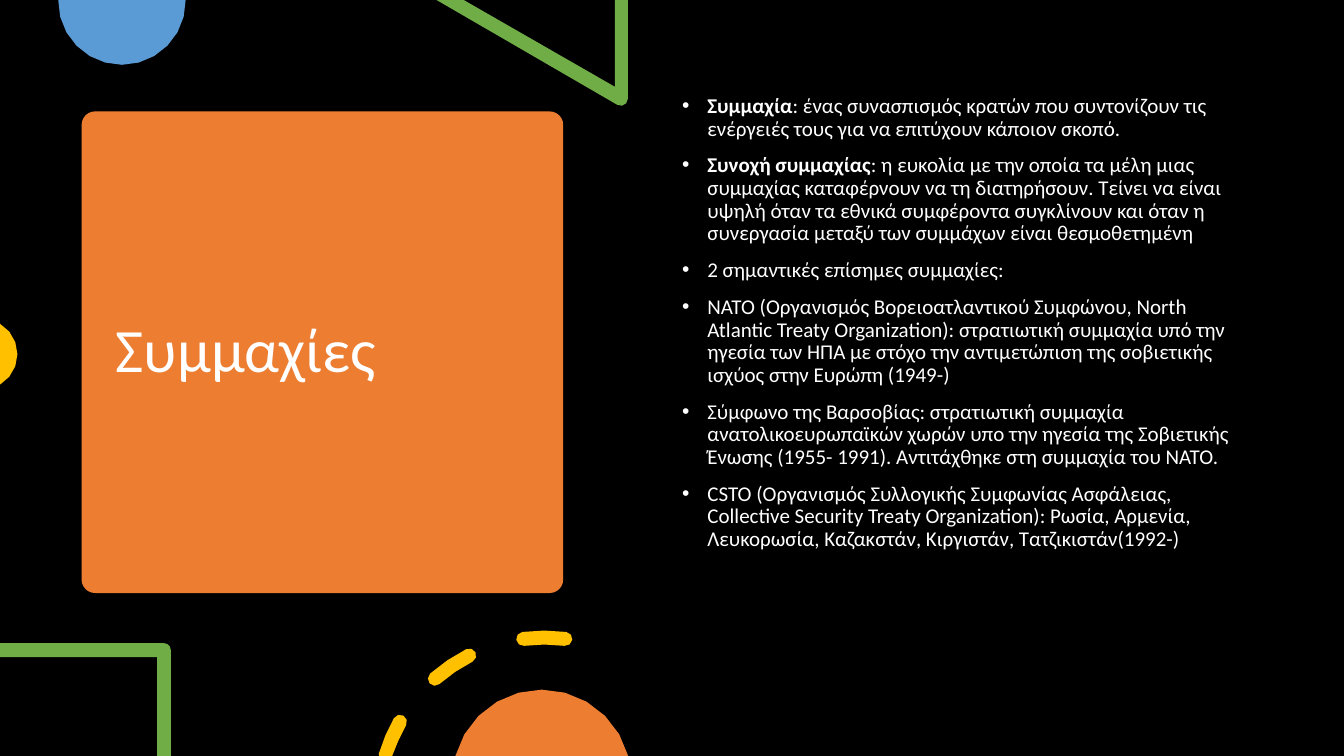
"""Build the slide about alliances."""
from dataclasses import dataclass
from math import cos, radians, sin

from lxml.etree import SubElement
from pptx import Presentation
from pptx.dml.color import RGBColor
from pptx.enum.shapes import MSO_SHAPE
from pptx.enum.text import MSO_ANCHOR
from pptx.oxml.ns import qn
from pptx.shapes.base import BaseShape
from pptx.slide import Slide
from pptx.text.text import TextFrame, _Paragraph
from pptx.util import Pt

BLACK = RGBColor(0x00, 0x00, 0x00)
WHITE = RGBColor(0xFF, 0xFF, 0xFF)
ORANGE = RGBColor(0xED, 0x7D, 0x31)
BLUE = RGBColor(0x5B, 0x9B, 0xD5)
GREEN = RGBColor(0x70, 0xAD, 0x47)
YELLOW = RGBColor(0xFF, 0xC0, 0x00)

SLIDE_WIDTH, SLIDE_HEIGHT = 960, 540
BULLET_INDENT = 18
RING_X, RING_Y, RING_RADIUS, DASH_RADIUS = 388.8, 573.8, 118.4, 5
DASH_ANGLES = [(196.6, 209.5), (228.7, 243.1), (262.7, 277.3)]

Contour = list[tuple[float, float]]


@dataclass
class Ornament:
    """A filled outline made of one or more contours."""
    color: RGBColor
    contours: list[Contour]


@dataclass
class Bullet:
    """A bulleted paragraph with an optional bold term."""
    term: str
    text: str


BULLETS = [
    Bullet("Συμμαχία", ": ένας συνασπισμός κρατών που συντονίζουν τις ενέργειές "
           "τους για να επιτύχουν κάποιον σκοπό."),
    Bullet("Συνοχή συμμαχίας", ": η ευκολία με την οποία τα μέλη μιας συμμαχίας "
           "καταφέρνουν να τη διατηρήσουν. Τείνει να είναι υψηλή όταν τα εθνικά "
           "συμφέροντα συγκλίνουν και όταν η συνεργασία μεταξύ των συμμάχων είναι "
           "θεσμοθετημένη"),
    Bullet("", "2 σημαντικές επίσημες συμμαχίες:"),
    Bullet("", "ΝΑΤΟ (Οργανισμός Βορειοατλαντικού Συμφώνου, North Atlantic Treaty "
           "Organization): στρατιωτική συμμαχία υπό την ηγεσία των ΗΠΑ με στόχο την "
           "αντιμετώπιση της σοβιετικής ισχύος στην Ευρώπη (1949-)"),
    Bullet("", "Σύμφωνο της Βαρσοβίας: στρατιωτική συμμαχία ανατολικοευρωπαϊκών "
           "χωρών υπο την ηγεσία της Σοβιετικής Ένωσης (1955- 1991). Αντιτάχθηκε "
           "στη συμμαχία του ΝΑΤΟ."),
    Bullet("", "CSTO (Οργανισμός Συλλογικής Συμφωνίας Ασφάλειας, Collective Security "
           "Treaty Organization): Ρωσία, Αρμενία, Λευκορωσία, Καζακστάν, Κιργιστάν, "
           "Τατζικιστάν(1992-)"),
]


def arc(x: float, y: float, radius: float, start: float, end: float,
        steps: int) -> Contour:
    """Return points along a circular arc, with angles in clockwise degrees."""
    angles = [radians(start + (end - start) * step / steps) for step in range(steps + 1)]
    return [(x + radius * cos(angle), y + radius * sin(angle)) for angle in angles]


def dash(start: float, end: float) -> Contour:
    """Return a round-ended piece of the ring, cut at the slide's bottom edge."""
    [start_center, end_center] = arc(RING_X, RING_Y, RING_RADIUS, start, end, 1)
    points = (arc(RING_X, RING_Y, RING_RADIUS + DASH_RADIUS, start, end, 2)
              + arc(*end_center, DASH_RADIUS, end, end + 180, 4)[1:-1]
              + arc(RING_X, RING_Y, RING_RADIUS - DASH_RADIUS, end, start, 2)
              + arc(*start_center, DASH_RADIUS, start + 180, start + 360, 4)[1:-1])
    return [(x, min(y, SLIDE_HEIGHT)) for x, y in points]


ORNAMENTS = [
    Ornament(BLUE, [arc(87.12, 0.8, 45.5, -1, 181, 12)]),
    Ornament(GREEN, [[(448.5, 0), (439.2, 0), (439.2, 62), (331.2, 0), (311.8, 0)]
                     + arc(443.5, 70.6, 5, 120, 0, 3)]),
    Ornament(YELLOW, [arc(-12.7, 253, 25.2, -59.7, 59.7, 6)]),
    Ornament(GREEN, [[(0, 459.4), (0, 469.4), (112.3, 469.4), (112.3, 540), (122, 540)]
                     + arc(117.2, 464.2, 4.8, 0, -90, 3)]),
    Ornament(YELLOW, [dash(start, end) for start, end in DASH_ANGLES]),
    Ornament(ORANGE, [arc(387, 556.5, 63.9, 195, 345, 10)]),
]


def paint(shape: BaseShape, color: RGBColor) -> None:
    """Give a shape a flat fill without line or shadow."""
    shape.shadow.inherit = False
    shape.fill.solid()
    shape.fill.fore_color.rgb = color
    shape.line.fill.background()


def draw_ornament(slide: Slide, ornament: Ornament) -> None:
    """Draw an ornament as a single freeform."""
    first, *others = [[(Pt(x), Pt(y)) for x, y in contour] for contour in ornament.contours]
    builder = slide.shapes.build_freeform(*first[0])
    builder.add_line_segments(first[1:])
    for contour in others:
        builder.move_to(*contour[0])
        builder.add_line_segments(contour[1:])
    paint(builder.convert_to_shape(), ornament.color)


def add_text_frame(slide: Slide, left: float, top: float, width: float,
                   height: float, anchor: MSO_ANCHOR) -> TextFrame:
    """Add a wrapping text box and return its frame."""
    frame = slide.shapes.add_textbox(Pt(left), Pt(top), Pt(width), Pt(height)).text_frame
    for name, value in {"word_wrap": True, "vertical_anchor": anchor}.items():
        setattr(frame, name, value)
    return frame


def add_run(paragraph: _Paragraph, text: str, size: float, bold: bool = False) -> None:
    """Add a white run to a paragraph."""
    run = paragraph.add_run()
    run.text = text
    font_format = {"name": "Calibri", "size": Pt(size), "bold": bold}
    for name, value in font_format.items():
        setattr(run.font, name, value)
    run.font.color.rgb = WHITE


def add_bullet(paragraph: _Paragraph, bullet: Bullet) -> None:
    """Fill a paragraph with a bullet, its term and its text."""
    for name, value in {"line_spacing": 0.9, "space_before": Pt(10)}.items():
        setattr(paragraph, name, value)
    properties = paragraph._p.get_or_add_pPr()
    properties.set("marL", str(Pt(BULLET_INDENT)))
    properties.set("indent", str(-Pt(BULLET_INDENT)))
    SubElement(properties, qn("a:buFont"), typeface="Arial")
    SubElement(properties, qn("a:buChar"), char="•")
    if bullet.term:
        add_run(paragraph, bullet.term, 15, bold=True)
    add_run(paragraph, bullet.text, 15)


def main() -> None:
    """Create the presentation and save it."""
    presentation = Presentation()
    presentation.slide_width = Pt(SLIDE_WIDTH)
    presentation.slide_height = Pt(SLIDE_HEIGHT)
    slide = presentation.slides.add_slide(presentation.slide_layouts[6])
    slide.background.fill.solid()
    slide.background.fill.fore_color.rgb = BLACK

    title_panel = slide.shapes.add_shape(
        MSO_SHAPE.ROUNDED_RECTANGLE, Pt(58.3), Pt(79.6), Pt(344), Pt(344))
    title_panel.adjustments[0] = 0.028
    paint(title_panel, ORANGE)

    title = add_text_frame(slide, 75.6, 87.8, 310.3, 328.3, MSO_ANCHOR.MIDDLE).paragraphs[0]
    title.line_spacing = 0.9
    add_run(title, "Συμμαχίες", 44)

    for ornament in ORNAMENTS:
        draw_ornament(slide, ornament)

    body = add_text_frame(slide, 480.2, 64.5, 414, 385.2, MSO_ANCHOR.TOP)
    for index, bullet in enumerate(BULLETS):
        paragraph = body.add_paragraph() if index else body.paragraphs[0]
        add_bullet(paragraph, bullet)

    presentation.save("out.pptx")


if __name__ == "__main__":
    main()
